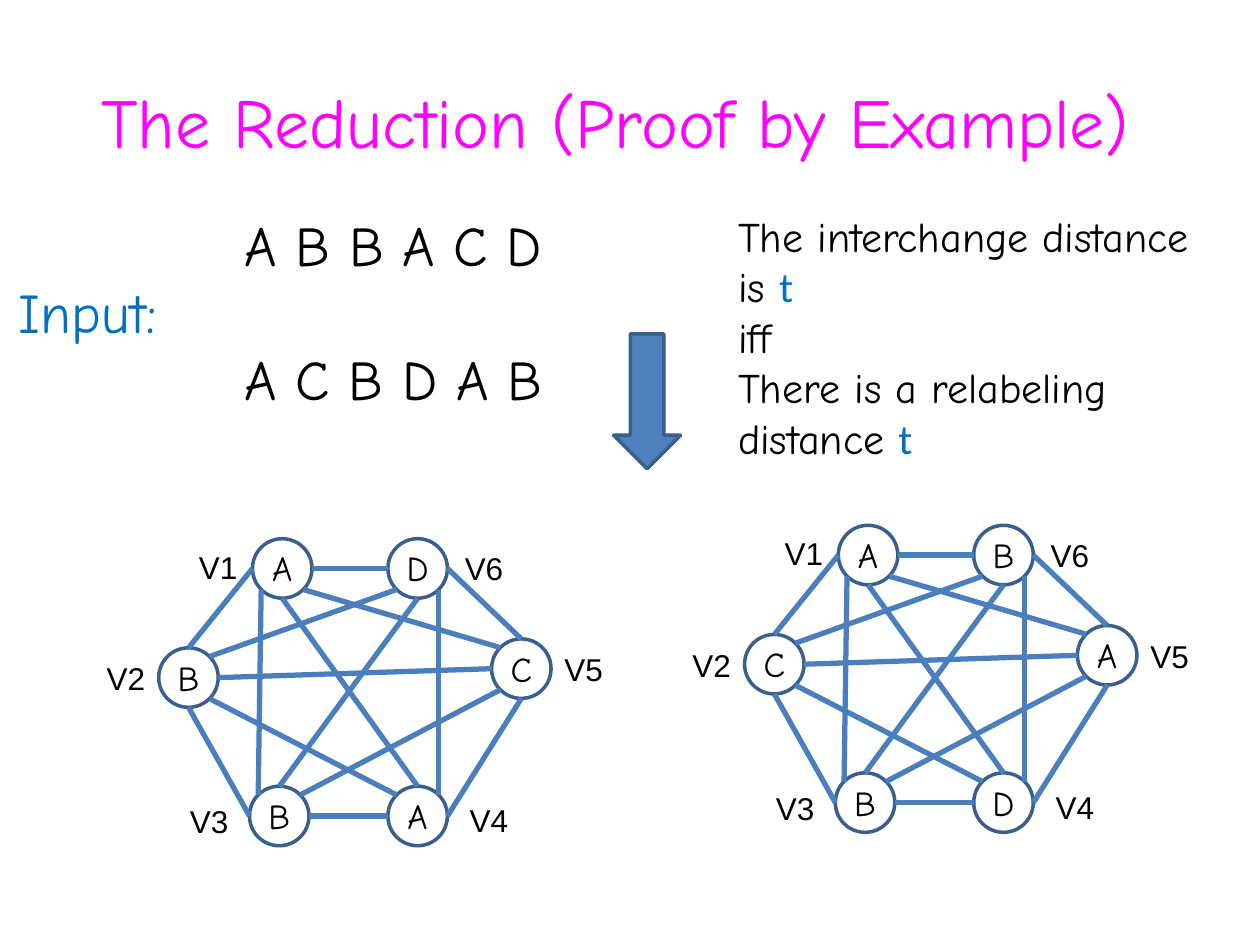
from dataclasses import dataclass
from math import sqrt

from lxml.etree import SubElement
from pptx import Presentation
from pptx.dml.color import RGBColor
from pptx.enum.shapes import MSO_CONNECTOR as Connector, MSO_SHAPE as Shape
from pptx.enum.text import MSO_ANCHOR as Anchor, MSO_AUTO_SIZE as AutoSize, PP_ALIGN as Align
from pptx.oxml.ns import qn
from pptx.util import Cm, Pt

COLORS = {
    "title": "FF00FF",
    "text": "000000",
    "accent": "0070C0",
    "arrow": "4F81BD",
    "outline": "3A5F8C",
    "edge": "4B7EBC",
    "node": "FFFFFF",
}
HAND, SANS, VARIABLE = "Comic Neue", "Arial", "Calibri"
NODE_SIZE = 1.2
DIAGONAL = 1 / sqrt(2)
SITES = {
    "top": (0, -1), "bottom": (0, 1), "left": (-1, 0), "right": (1, 0),
    "top left": (-DIAGONAL, -DIAGONAL), "top right": (DIAGONAL, -DIAGONAL),
    "bottom left": (-DIAGONAL, DIAGONAL), "bottom right": (DIAGONAL, DIAGONAL),
}


@dataclass(frozen=True)
class Node:
    left: float
    top: float
    label_dx: float
    label_dy: float


@dataclass(frozen=True)
class Edge:
    start: str
    start_site: str
    end: str
    end_site: str


@dataclass(frozen=True)
class Graph:
    dx: float
    dy: float
    letters: str


@dataclass(frozen=True)
class Span:
    text: str
    color: str = "text"
    font: str = HAND


NODES = {
    "V1": Node(5.09, 10.86, -1.33, 0.06),
    "V2": Node(3.2, 13.06, -1.3, 0.1),
    "V3": Node(5.03, 15.85, -1.45, 0.2),
    "V4": Node(7.82, 15.85, 1.4, 0.18),
    "V5": Node(9.91, 12.88, 1.22, 0.1),
    "V6": Node(7.82, 10.86, 1.3, 0.09),
}
EDGES = [
    Edge("V1", "right", "V6", "left"),
    Edge("V3", "right", "V4", "left"),
    Edge("V2", "top", "V1", "left"),
    Edge("V2", "bottom", "V3", "left"),
    Edge("V6", "right", "V5", "top"),
    Edge("V4", "right", "V5", "bottom"),
    Edge("V1", "bottom right", "V5", "top left"),
    Edge("V1", "bottom", "V4", "top"),
    Edge("V3", "top left", "V1", "bottom left"),
    Edge("V3", "top", "V6", "bottom"),
    Edge("V3", "top right", "V5", "bottom left"),
    Edge("V2", "top right", "V6", "bottom left"),
    Edge("V4", "top right", "V6", "bottom right"),
    Edge("V2", "right", "V5", "left"),
    Edge("V2", "bottom right", "V4", "top left"),
]
GRAPHS = [Graph(0, 0, "ABBACD"), Graph(11.81, -0.27, "ACBDAB")]
INPUT_LINES = [
    (4.55, Span("A B B A C D")),
    (0, Span("Input:", "accent")),
    (4.55, Span("A C B D A B")),
]
CLAIM = [
    [Span("The interchange distance is "), Span("t", "accent", VARIABLE)],
    [Span("iff")],
    [Span("There is a relabeling distance "), Span("t", "accent", VARIABLE)],
]


def rgb(name: str) -> RGBColor:
    return RGBColor.from_string(COLORS[name])


def add_span(para, span: Span, size: float) -> None:
    run = para.add_run()
    run.text = span.text
    run.font.name = span.font
    run.font.size = Pt(size)
    run.font.color.rgb = rgb(span.color)


def add_text(slide, left: float, top: float, width: float, height: float,
             paras: list[list[Span]], size: float, wrap: bool = True,
             align: Align = Align.LEFT):
    box = slide.shapes.add_textbox(Cm(left), Cm(top), Cm(width), Cm(height))
    frame = box.text_frame
    frame.word_wrap = wrap
    frame.auto_size = AutoSize.SHAPE_TO_FIT_TEXT
    for index, spans in enumerate(paras):
        para = frame.add_paragraph() if index else frame.paragraphs[0]
        para.alignment = align
        for span in spans:
            add_span(para, span, size)
    return box


def add_filled(slide, kind: Shape, left: float, top: float, width: float,
               height: float, fill: str) -> None:
    shape = slide.shapes.add_shape(kind, Cm(left), Cm(top), Cm(width), Cm(height))
    shape.shadow.inherit = False
    shape.fill.solid()
    shape.fill.fore_color.rgb = rgb(fill)
    shape.line.color.rgb = rgb("outline")
    shape.line.width = Pt(2)


def site_point(graph: Graph, name: str, site: str) -> tuple[Cm, Cm]:
    node, (across, down) = NODES[name], SITES[site]
    radius = NODE_SIZE / 2
    return (Cm(graph.dx + node.left + radius * (1 + across)),
            Cm(graph.dy + node.top + radius * (1 + down)))


def add_edge(slide, graph: Graph, edge: Edge) -> None:
    line = slide.shapes.add_connector(
        Connector.STRAIGHT,
        *site_point(graph, edge.start, edge.start_site),
        *site_point(graph, edge.end, edge.end_site))
    line.line.color.rgb = rgb("edge")
    line.line.width = Pt(3)
    SubElement(line._element.spPr, qn("a:effectLst"))


def add_graph(slide, graph: Graph) -> None:
    for node in NODES.values():
        add_filled(slide, Shape.OVAL, graph.dx + node.left, graph.dy + node.top,
                   NODE_SIZE, NODE_SIZE, "node")
    for edge in EDGES:
        add_edge(slide, graph, edge)
    for (name, node), letter in zip(NODES.items(), graph.letters):
        left, top = graph.dx + node.left, graph.dy + node.top
        add_text(slide, left + node.label_dx, top + node.label_dy, 1.3, 1.02,
                 [[Span(name, font=SANS)]], 18, wrap=False)
        add_text(slide, left + 0.1, top + 0.04, 1, 1.12,
                 [[Span(letter)]], 20, wrap=False, align=Align.CENTER)


def add_title(slide, text: str) -> None:
    title = slide.shapes.title
    title.left, title.top, title.width, title.height = Cm(0.4), Cm(0.73), Cm(24), Cm(3.39)
    title.text_frame.vertical_anchor = Anchor.MIDDLE
    para = title.text_frame.paragraphs[0]
    para.alignment = Align.CENTER
    add_span(para, Span(text, "title"), 40)


def add_input(slide) -> None:
    box = add_text(slide, 0.13, 4.12, 24.9, 4.37, [[span] for _, span in INPUT_LINES], 32)
    for para, (indent, _) in zip(box.text_frame.paragraphs, INPUT_LINES):
        para._p.get_or_add_pPr().set("marL", str(Cm(indent)))


def main() -> None:
    deck = Presentation()
    deck.slide_width, deck.slide_height = Cm(25.4), Cm(19.05)
    page = deck.slides.add_slide(deck.slide_layouts[5])
    add_title(page, "The Reduction (Proof by Example)")
    add_input(page)
    add_filled(page, Shape.DOWN_ARROW, 12.37, 6.73, 1.35, 2.72, "arrow")
    for graph in GRAPHS:
        add_graph(page, graph)
    add_text(page, 14.63, 4.12, 9.6, 5.38, CLAIM, 24)
    deck.save("out.pptx")


if __name__ == "__main__":
    main()
